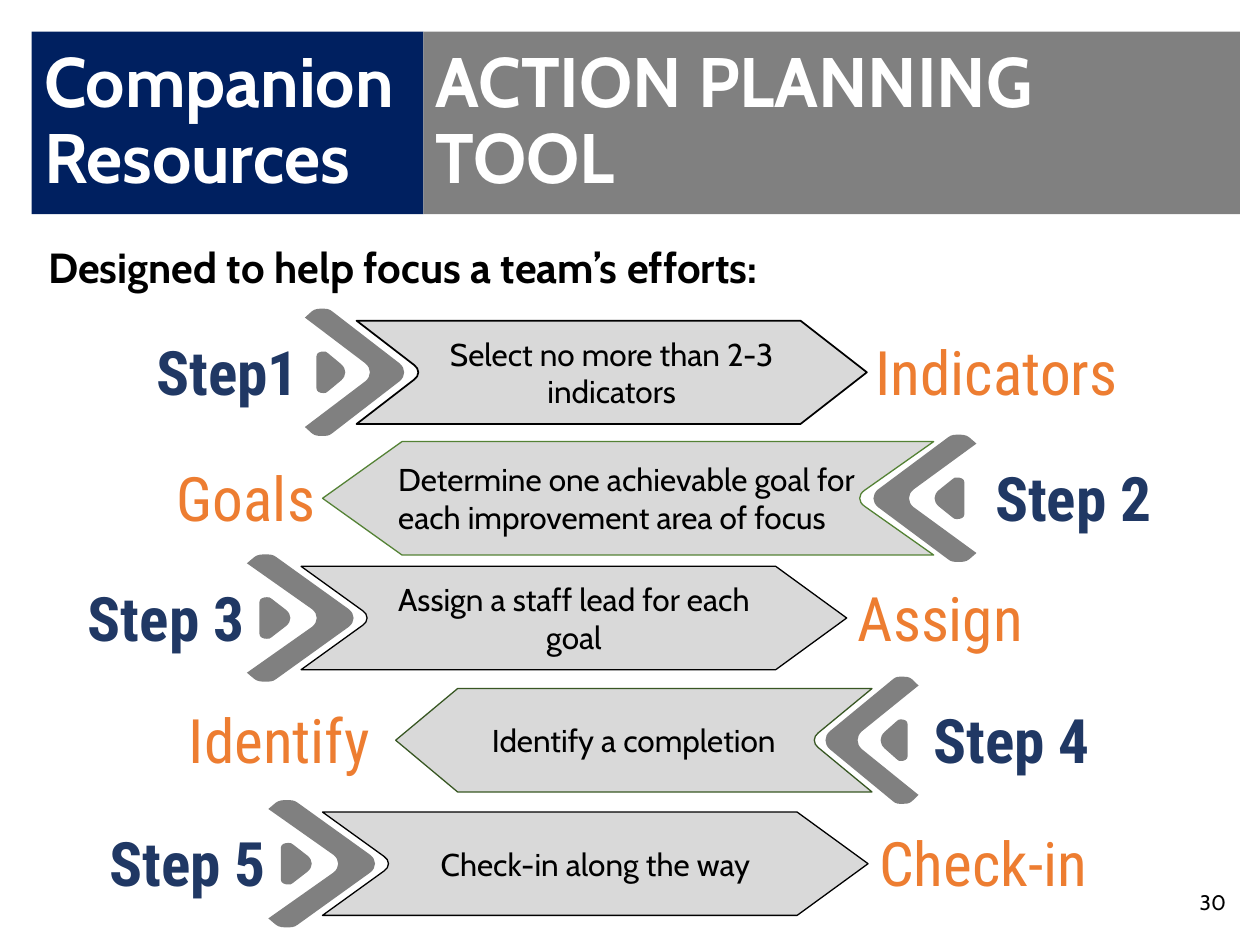
from pptx import Presentation
from pptx.dml.color import RGBColor
from pptx.enum.shapes import MSO_SHAPE
from pptx.enum.text import MSO_ANCHOR, PP_ALIGN
from pptx.oxml.ns import qn
from pptx.util import Inches, Pt

RECT = MSO_SHAPE.RECTANGLE
MIDDLE, TOP = MSO_ANCHOR.MIDDLE, MSO_ANCHOR.TOP
LEFT, CENTER, RIGHT = PP_ALIGN.LEFT, PP_ALIGN.CENTER, PP_ALIGN.RIGHT

BODY, DISPLAY = "Cabin", "Roboto Condensed"
COLORS = {
    "navy": "002060", "gray": "808080", "light": "D9D9D9", "black": "000000",
    "white": "FFFFFF", "step": "203864", "key": "ED7D31",
    "green": "548235", "dark_green": "385723",
}

# Right-pointing outlines in a unit box: one point is a line, three are a curve
CHEVRON = [
    [(.17, 0)], [(.14, 0), (.1, 0), (.07, .02)], [(0, .07)],
    [(.6, .43)], [(.66, .47), (.66, .53), (.6, .57)], [(0, .93)],
    [(.07, .98)], [(.1, 1), (.14, 1), (.17, 1)],
    [(.21, 1), (.24, 1), (.27, .98)], [(.94, .57)],
    [(1, .53), (1, .47), (.94, .43)], [(.27, .02)],
    [(.24, 0), (.21, 0), (.17, 0)],
]
TRIANGLE = [
    [(.23, 0)], [(.12, 0), (0, .03), (0, .12)], [(0, .88)],
    [(0, .97), (.12, 1), (.23, 1)], [(.27, 1), (.35, 1), (.38, .96)],
    [(.81, .7)], [(1, .58), (1, .42), (.81, .3)], [(.38, .04)],
    [(.35, 0), (.27, 0), (.23, 0)],
]
BANNER = [
    [(0, 0)], [(.113, .43)], [(.118, .45), (.121, .47), (.121, .5)],
    [(.121, .53), (.118, .55), (.113, .57)],
    [(0, 1)], [(.87, 1)], [(1, .5)], [(.87, 0)],
]

# step, (left, width); keyword, (left, width), align; chevron (left, top, width);
# banner text, (left, width, height), align, line colour, line width; mirrored
STEPS = [
    ("Step1", (1.04, 1.43), "Indicators", (6.85, 2.19), LEFT, (2.42, 2.45, .8),
     "Select no more than 2-3 indicators", (2.83, 4.05, .82), CENTER,
     "black", 1, False),
    ("Step 2", (7.79, 1.45), "Goals", (.66, 1.94), RIGHT, (6.92, 3.45, .83),
     "Determine one achievable goal for each improvement area of focus",
     (2.56, 4.85, .9), LEFT, "green", .75, True),
    ("Step 3", (.34, 1.7), "Assign", (6.71, 2.06), LEFT, (1.96, 4.4, .86),
     "Assign a staff lead for each goal", (2.39, 4.33, .82), CENTER,
     "black", .75, False),
    ("Step 4", (7.2, 1.55), "Identify", (1.4, 1.73), LEFT, (6.54, 5.37, .75),
     "Identify a completion", (3.14, 3.78, .82), CENTER,
     "dark_green", .75, True),
    ("Step 5", (.51, 1.7), "Check-in", (6.88, 2.06), LEFT, (2.13, 6.35, .86),
     "Check-in along the way", (2.56, 4.33, .82), CENTER,
     "black", .75, False),
]
CHEVRON_H, TRIANGLE_H = 1.01, .33


def rgb(name):
    return RGBColor.from_string(COLORS[name])


def write(sp, text, size, color, font=BODY, bold=False, align=LEFT,
          anchor=MIDDLE, insets=(.1, .05), spacing=None):
    tf = sp.text_frame
    tf.word_wrap = True
    tf.vertical_anchor = anchor
    tf.margin_left = tf.margin_right = Inches(insets[0])
    tf.margin_top = tf.margin_bottom = Inches(insets[1])
    p = tf.paragraphs[0]
    p.text = text
    p.alignment = align
    if spacing:
        p.line_spacing = spacing
    for r in p.runs:
        r.font.size, r.font.bold, r.font.name = Pt(size), bold, font
        r.font.color.rgb = rgb(color)


def paint(sp, fill, line=None, width=.75):
    sp.shadow.inherit = False
    sp.fill.solid()
    sp.fill.fore_color.rgb = rgb(fill)
    if line:
        sp.line.color.rgb = rgb(line)
        sp.line.width = Pt(width)
    else:
        sp.line.fill.background()


def add_text(s, box, text, size, color, **fmt):
    sp = s.shapes.add_textbox(*map(Inches, box))
    write(sp, text, size, color, **fmt)


def bend(sp, outline):
    """Join the three line segments of each curved part into one cubic curve."""
    segments = iter(list(sp._element.find(".//" + qn("a:path"))))
    for part in outline:
        first, *rest = [next(segments) for _ in part]
        if rest:
            first.tag = qn("a:cubicBezTo")
        for segment in rest:
            first.append(segment[0])
            segment.getparent().remove(segment)


def add_outline(s, outline, box, mirrored, fill, **line):
    x, y, w, h = box
    points = [(Inches(x + w * (1 - u if mirrored else u)), Inches(y + h * v))
              for part in outline for u, v in part]
    builder = s.shapes.build_freeform(*points[0])
    builder.add_line_segments(points[1:], close=True)
    sp = builder.convert_to_shape()
    bend(sp, outline)
    paint(sp, fill, **line)
    return sp


def add_step(s, step, step_box, key, key_box, key_align, chevron,
             text, banner, align, line, width, mirrored):
    x, y, w = chevron
    add_outline(s, CHEVRON, (x, y, w, CHEVRON_H), mirrored, "gray")

    # Small triangle inside the open side of the chevron
    tri_w, gap = .3 * w, .115 * w
    tri_x = x + w - gap - tri_w if mirrored else x + gap
    add_outline(s, TRIANGLE, (tri_x, y + .34, tri_w, TRIANGLE_H), mirrored, "gray")

    # Banner, centred on the chevron
    bx, bw, bh = banner
    sp = add_outline(s, BANNER, (bx, y + (CHEVRON_H - bh) / 2, bw, bh), mirrored,
                     "light", line=line, width=width)
    write(sp, text, 18, "black", align=align, insets=(.6, .1))

    # Keyword and step label
    add_text(s, (key_box[0], y + .26, key_box[1], .47), key, 35, "key",
             font=DISPLAY, align=key_align, insets=(.1, .1))
    add_text(s, (step_box[0], y + .23, step_box[1], .53), step, 35, "step",
             font=DISPLAY, bold=True, align=RIGHT, insets=(.1, .1))


def add_header(s):
    title = s.shapes.title
    title.left, title.top = Inches(.25), Inches(.25)
    title.width, title.height = Inches(3.11), Inches(1.45)
    title.fill.solid()
    title.fill.fore_color.rgb = rgb("navy")
    band = s.shapes.add_shape(RECT, *map(Inches, (3.36, .25, 6.48, 1.45)))
    paint(band, "gray")
    for sp, text in ((title, "Companion \vResources"),
                     (band, "ACTION PLANNING TOOL")):
        write(sp, text, 40, "white", bold=True, spacing=.9)


def main():
    prs = Presentation()
    prs.slide_width, prs.slide_height = Inches(10), Inches(7.5)
    s = prs.slides.add_slide(prs.slide_layouts[5])
    add_header(s)
    add_text(s, (-1.55, 1.87, 9.49, .5), "Designed to help focus a team’s efforts:",
             24, "black", bold=True, align=CENTER, anchor=TOP)
    for step in STEPS:
        add_step(s, *step)
    add_text(s, (7.58, 6.96, 2.25, .4), "30", 12, "black", align=RIGHT)
    prs.save("out.pptx")


if __name__ == "__main__":
    main()
